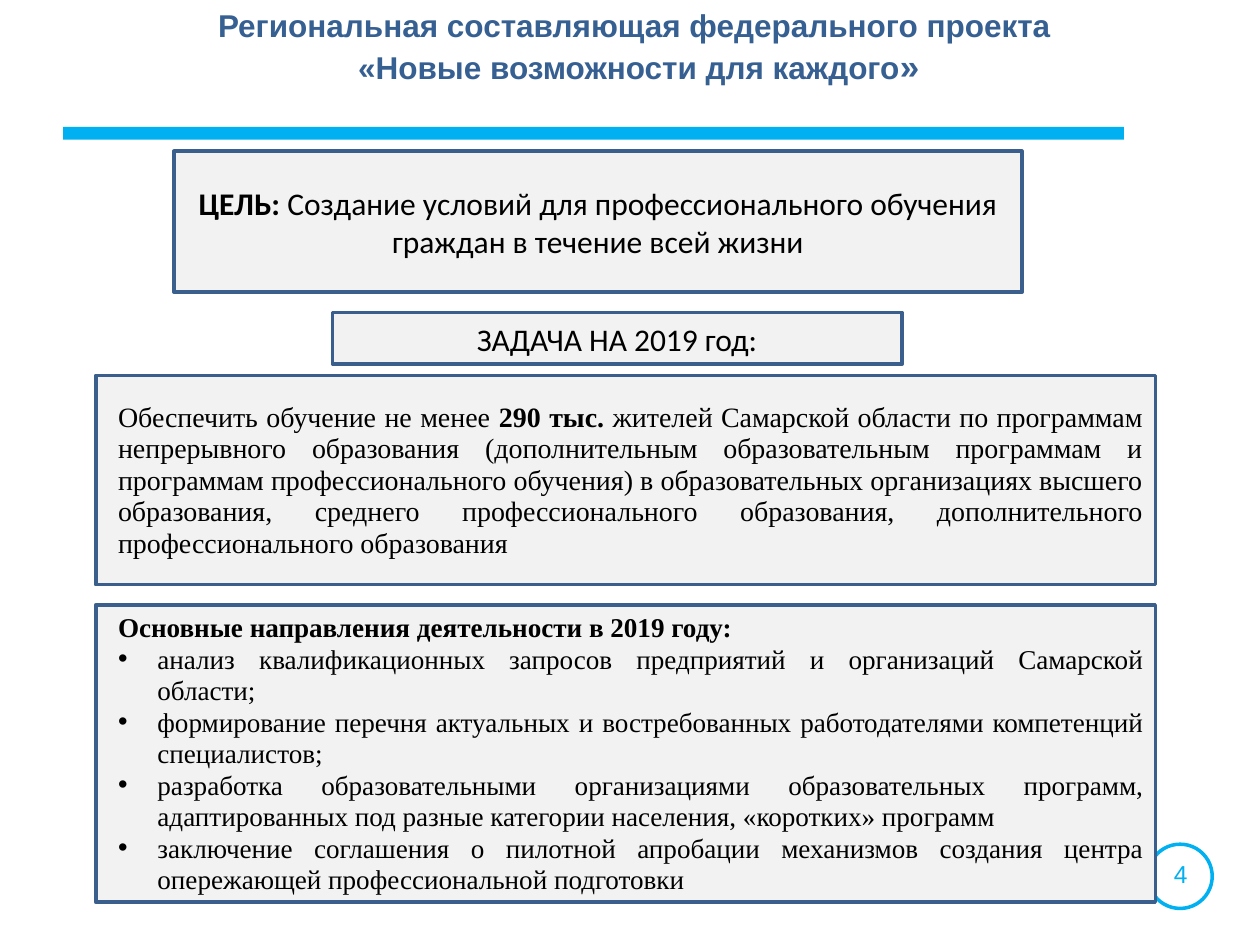
from pptx import Presentation
from pptx.dml.color import RGBColor
from pptx.enum.shapes import MSO_SHAPE
from pptx.enum.text import MSO_ANCHOR, PP_ALIGN
from pptx.util import Pt
from lxml.etree import SubElement
from pptx.oxml.ns import qn

SKY = RGBColor(0x00, 0xB0, 0xF0)
TITLE_BLUE = RGBColor(0x37, 0x60, 0x92)
BORDER_BLUE = RGBColor(0x3A, 0x5F, 0x8C)
PANEL_GREY = RGBColor(0xF2, 0xF2, 0xF2)
BLACK = RGBColor(0x00, 0x00, 0x00)

TEXT_INDENT = 5.67
BULLET_HANG = 22.5
LINE_PITCH = 18

DIRECTIONS = [
    "анализ квалификационных запросов предприятий и организаций Самарской области;",
    "формирование перечня актуальных и востребованных работодателями компетенций специалистов;",
    "разработка образовательными организациями образовательных программ, "
    "адаптированных под разные категории населения, «коротких» программ",
    "заключение соглашения о пилотной апробации механизмов создания центра "
    "опережающей профессиональной подготовки",
]


class SlideBuilder:
    def __init__(self, page):
        self.page = page

    def shape(self, kind, left, top, width, height, fill=None, line=None):
        shape = self.page.shapes.add_shape(kind, Pt(left), Pt(top), Pt(width), Pt(height))
        shape.shadow.inherit = False
        if fill is None:
            shape.fill.background()
        else:
            shape.fill.solid()
            shape.fill.fore_color.rgb = fill
        if line is None:
            shape.line.fill.background()
        else:
            shape.line.color.rgb = line
            shape.line.width = Pt(2)
        return shape

    def panel(self, left, top, width, height):
        panel = self.shape(MSO_SHAPE.RECTANGLE, left, top, width, height, PANEL_GREY, BORDER_BLUE)
        panel.text_frame.word_wrap = True
        panel.text_frame.vertical_anchor = MSO_ANCHOR.MIDDLE
        return panel.text_frame

    def text_box(self, left, top, width, height):
        box = self.page.shapes.add_textbox(Pt(left), Pt(top), Pt(width), Pt(height))
        box.text_frame.word_wrap = True
        return box.text_frame

    def spans(self, para, parts, font, size, color=BLACK, align=PP_ALIGN.CENTER):
        para.alignment = align
        for text, bold in parts:
            span = para.add_run()
            span.text = text
            span.font.name = font
            span.font.size = Pt(size)
            span.font.bold = bold
            span.font.color.rgb = color

    def body(self, para, parts, size, bullet=False):
        hang = BULLET_HANG if bullet else 0
        para.line_spacing = Pt(LINE_PITCH)
        properties = para._p.get_or_add_pPr()
        properties.set("marL", str(Pt(TEXT_INDENT + hang)))
        properties.set("indent", str(Pt(-hang)))
        if bullet:
            SubElement(properties, qn("a:buFont")).set("typeface", "Arial")
            SubElement(properties, qn("a:buChar")).set("char", "•")
        self.spans(para, parts, "Times New Roman", size, align=PP_ALIGN.JUSTIFY)


def main():
    deck = Presentation()
    deck.slide_width, deck.slide_height = Pt(720), Pt(540)
    builder = SlideBuilder(deck.slides.add_slide(deck.slide_layouts[6]))

    builder.shape(MSO_SHAPE.RECTANGLE, 36, 72.6, 606.2, 7.2, fill=SKY)
    builder.shape(MSO_SHAPE.OVAL, 656, 482.4, 36.7, 36.7, line=SKY)
    number = builder.text_box(653.8, 487.4, 41.8, 24.5)
    builder.spans(number.paragraphs[0], [("4", False)], "Arial", 14, SKY)

    title = builder.text_box(0, 0, 730, 66.2)
    builder.spans(title.paragraphs[0], [("Региональная составляющая федерального проекта ", True)],
                  "Arial", 18, TITLE_BLUE)
    project = title.add_paragraph()
    builder.spans(project, [("«Новые возможности для каждого", True), ("»", True)],
                  "Arial", 18, TITLE_BLUE)
    project.runs[-1].font.size = Pt(20)

    goal = builder.panel(99.4, 86.4, 484.6, 80.6)
    builder.spans(goal.paragraphs[0], [
        ("ЦЕЛЬ: ", True),
        ("Создание условий для профессионального обучения граждан в течение всей жизни", False),
    ], "Calibri", 18)

    heading = builder.panel(190, 178.6, 325.4, 29.5)
    builder.spans(heading.paragraphs[0], [("ЗАДАЧА НА 2019 год:", False)], "Calibri", 18)

    task = builder.panel(54.7, 214.6, 605.5, 119.5)
    builder.body(task.paragraphs[0], [
        ("Обеспечить обучение не менее ", False),
        ("290 тыс. ", True),
        ("жителей Самарской области по программам непрерывного образования "
         "(дополнительным образовательным программам и программам профессионального обучения) "
         "в образовательных организациях высшего образования, среднего профессионального "
         "образования, дополнительного профессионального образования", False),
    ], 16)

    plan = builder.panel(54.7, 345.6, 605.5, 170)
    builder.body(plan.paragraphs[0], [("Основные направления деятельности в 2019 году:", True)], 15.5)
    for direction in DIRECTIONS:
        builder.body(plan.add_paragraph(), [(direction, False)], 15.5, bullet=True)

    deck.save("out.pptx")


if __name__ == "__main__":
    main()
